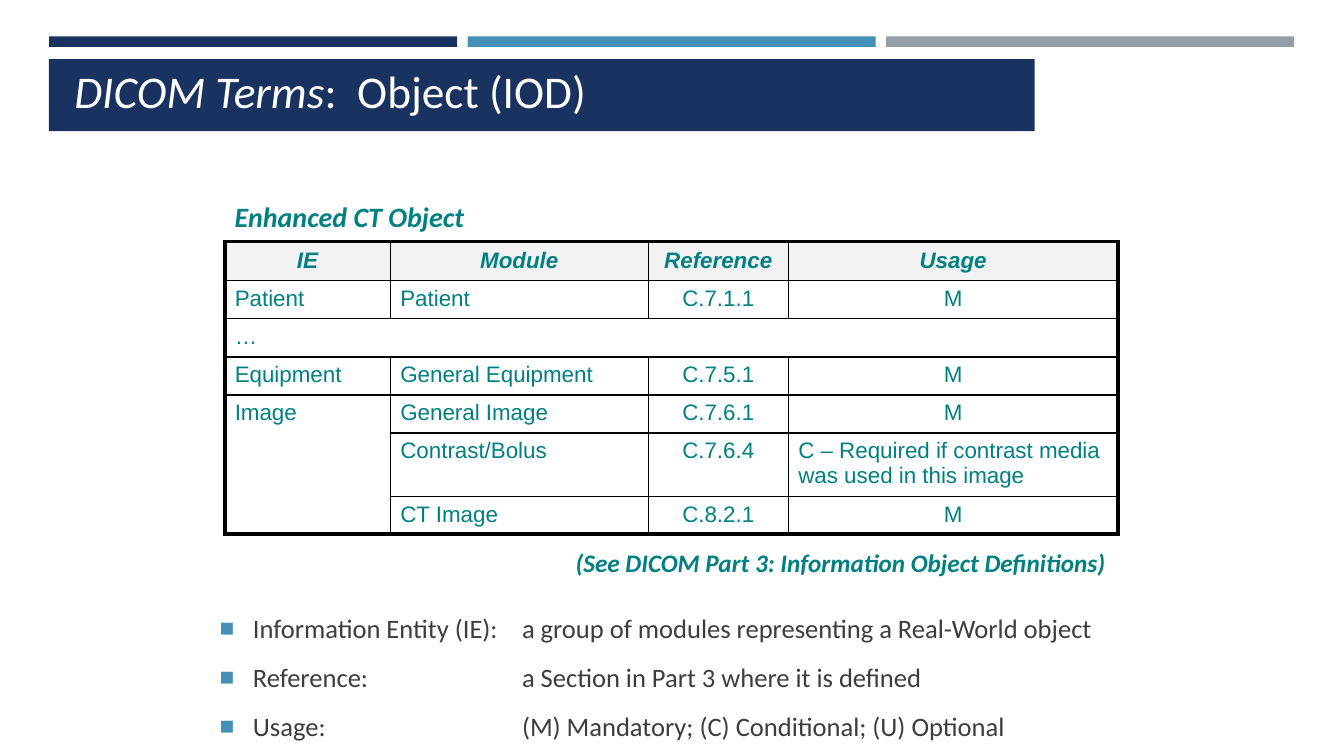
from lxml import etree
from pptx import Presentation
from pptx.dml.color import RGBColor
from pptx.enum.shapes import MSO_SHAPE
from pptx.enum.text import MSO_ANCHOR, PP_ALIGN
from pptx.oxml.ns import qn
from pptx.util import Pt

RECTANGLE = MSO_SHAPE.RECTANGLE
TOP, MIDDLE, BOTTOM = MSO_ANCHOR.TOP, MSO_ANCHOR.MIDDLE, MSO_ANCHOR.BOTTOM
LEFT, CENTER = PP_ALIGN.LEFT, PP_ALIGN.CENTER

TITLE = [("DICOM Terms", True), (":  Object (IOD)", False)]
CAPTION = "Enhanced CT Object"
SOURCE_NOTE = "(See DICOM Part 3: Information Object Definitions)"
MODULES = [
    ("IE", "Module", "Reference", "Usage"),
    ("Patient", "Patient", "C.7.1.1", "M"),
    ("…", "", "", ""),
    ("Equipment", "General Equipment", "C.7.5.1", "M"),
    ("Image", "General Image", "C.7.6.1", "M"),
    ("", "Contrast/Bolus", "C.7.6.4",
     "C – Required if contrast media was used in this image"),
    ("", "CT Image", "C.8.2.1", "M"),
]
MERGES = [((2, 0), (2, 3)), ((4, 0), (6, 0))]
DEFINITIONS = [
    ("Information Entity (IE):",
     "a group of modules representing a Real-World object"),
    ("Reference:", "a Section in Part 3 where it is defined"),
    ("Usage:", "(M) Mandatory; (C) Conditional; (U) Optional"),
]

THEME = {
    "navy": "1A3260", "blue": "4590B8", "gray": "969FA7", "white": "FFFFFF",
    "teal": "008080", "body": "3D3D3D", "header": "F2F2F2", "black": "000000",
    "text_font": "Calibri", "table_font": "Arial",
    "title_size": 32.4, "caption_size": 20, "note_size": 18,
    "body_size": 19, "table_size": 16,
    "thick": 3, "thin": 1,
}

SLIDE_SIZE = (960, 540)
BAR_LEFT, BAR_TOP, BAR_WIDTH, BAR_HEIGHT, BAR_GAP = 35, 26, 291.5, 7.5, 7.5
TITLE_BAND = (35, 42.2, 704, 51.6)
TITLE_BOX = (46, 42.5, 687, 45.4)
CAPTION_BOX = (160.5, 141.8, 219, 39)
NOTE_BOX = (404, 390.2, 435.6, 31)
DEFINITION_BOX = (149.8, 432, 676.8, 103)
TABLE_LEFT, TABLE_TOP = 160.5, 172.6
COLUMN_WIDTHS = [118.3, 184.3, 100, 235.6]
ROW_HEIGHTS = [28, 27.2, 27.2, 27.2, 27.2, 45.6, 26.6]
BULLET_INDENT, DEFINITION_TAB = 23.8, 216


def color(name):
    return RGBColor.from_string(THEME[name])


def points(values):
    return [Pt(value) for value in values]


def style(span, font, size, tone, bold=False, italic=False):
    span.font.name = THEME[font]
    span.font.size = Pt(THEME[size])
    span.font.color.rgb = color(tone)
    span.font.bold = bold
    span.font.italic = italic


def add_bar(slide, bounds, tone):
    bar = slide.shapes.add_shape(RECTANGLE, *points(bounds))
    bar.shadow.inherit = False
    bar.fill.solid()
    bar.fill.fore_color.rgb = color(tone)
    bar.line.fill.background()


def add_text_frame(slide, bounds, anchor=TOP):
    frame = slide.shapes.add_textbox(*points(bounds)).text_frame
    frame.word_wrap = True
    frame.vertical_anchor = anchor
    return frame


def add_title(slide):
    para = add_text_frame(slide, TITLE_BOX, BOTTOM).paragraphs[0]
    for text, italic in TITLE:
        span = para.add_run()
        span.text = text
        style(span, "text_font", "title_size", "white", italic=italic)


def add_caption(slide, bounds, text, size):
    para = add_text_frame(slide, bounds).paragraphs[0]
    para.text = text
    para.line_spacing = 0.9
    style(para.runs[0], "text_font", size, "teal", bold=True, italic=True)


def draw_edge(cell, side, width):
    """Draw one border of a cell; side is L, R, T or B."""
    properties = cell._tc.get_or_add_tcPr()
    line = etree.SubElement(properties, qn(f"a:ln{side}"), w=str(Pt(width)))
    fill = etree.SubElement(line, qn("a:solidFill"))
    etree.SubElement(fill, qn("a:srgbClr"), val=THEME["black"])


def draw_borders(cell, row, column):
    """Thick lines round the table, thin ones between its cells."""
    row_end, column_end = row + 1, column + 1
    if cell.is_merge_origin:
        row_end, column_end = row + cell.span_height, column + cell.span_width
    outer = {"L": column == 0, "R": column_end == len(COLUMN_WIDTHS),
             "T": row == 0, "B": row_end == len(ROW_HEIGHTS)}
    for side, is_outer in outer.items():
        if is_outer or not cell.is_spanned:
            draw_edge(cell, side, THEME["thick" if is_outer else "thin"])


def fill_cell(cell, text, row, column):
    is_header = row == 0
    draw_borders(cell, row, column)
    if is_header:
        cell.fill.solid()
        cell.fill.fore_color.rgb = color("header")
    else:
        cell.fill.background()
    cell.vertical_anchor = MIDDLE if is_header else TOP
    if text:
        para = cell.text_frame.paragraphs[0]
        para.text = text
        is_centered = is_header or column == 2 or text == "M"
        para.alignment = CENTER if is_centered else LEFT
        style(para.runs[0], "table_font", "table_size", "teal",
              bold=is_header, italic=is_header)


def add_module_table(slide):
    bounds = (TABLE_LEFT, TABLE_TOP, sum(COLUMN_WIDTHS), sum(ROW_HEIGHTS))
    table = slide.shapes.add_table(
        len(ROW_HEIGHTS), len(COLUMN_WIDTHS), *points(bounds)).table
    table.first_row = table.horz_banding = False
    for column, width in zip(table.columns, COLUMN_WIDTHS):
        column.width = Pt(width)
    for row, height in zip(table.rows, ROW_HEIGHTS):
        row.height = Pt(height)
    for first, last in MERGES:
        table.cell(*first).merge(table.cell(*last))
    for row, texts in enumerate(MODULES):
        for column, text in enumerate(texts):
            fill_cell(table.cell(row, column), text, row, column)


def add_bullet(para):
    """Give a paragraph its square bullet, hanging indent and tab stop."""
    properties = para._p.get_or_add_pPr()
    properties.set("marL", str(Pt(BULLET_INDENT)))
    properties.set("indent", str(-Pt(BULLET_INDENT)))
    tint = etree.SubElement(properties, qn("a:buClr"))
    etree.SubElement(tint, qn("a:srgbClr"), val=THEME["blue"])
    etree.SubElement(properties, qn("a:buSzPct"), val="92000")
    etree.SubElement(properties, qn("a:buFont"), typeface=THEME["table_font"])
    etree.SubElement(properties, qn("a:buChar"), char="■")
    tabs = etree.SubElement(properties, qn("a:tabLst"))
    etree.SubElement(tabs, qn("a:tab"), pos=str(Pt(DEFINITION_TAB)), algn="l")


def add_definitions(slide):
    frame = add_text_frame(slide, DEFINITION_BOX, MIDDLE)
    frame.text = "\n".join("\t".join(entry) for entry in DEFINITIONS)
    for index, para in enumerate(frame.paragraphs):
        add_bullet(para)
        para.space_before = Pt(6 if index else 0)
        para.space_after = Pt(6)
        for span in para.runs:
            style(span, "text_font", "body_size", "body")


def main():
    deck = Presentation()
    deck.slide_width, deck.slide_height = points(SLIDE_SIZE)
    slide = deck.slides.add_slide(deck.slide_layouts[6])
    for index, tone in enumerate(("navy", "blue", "gray")):
        left = BAR_LEFT + index * (BAR_WIDTH + BAR_GAP)
        add_bar(slide, (left, BAR_TOP, BAR_WIDTH, BAR_HEIGHT), tone)
    add_bar(slide, TITLE_BAND, "navy")
    add_title(slide)
    add_definitions(slide)
    add_module_table(slide)
    add_caption(slide, CAPTION_BOX, CAPTION, "caption_size")
    add_caption(slide, NOTE_BOX, SOURCE_NOTE, "note_size")
    deck.save("out.pptx")


if __name__ == "__main__":
    main()
